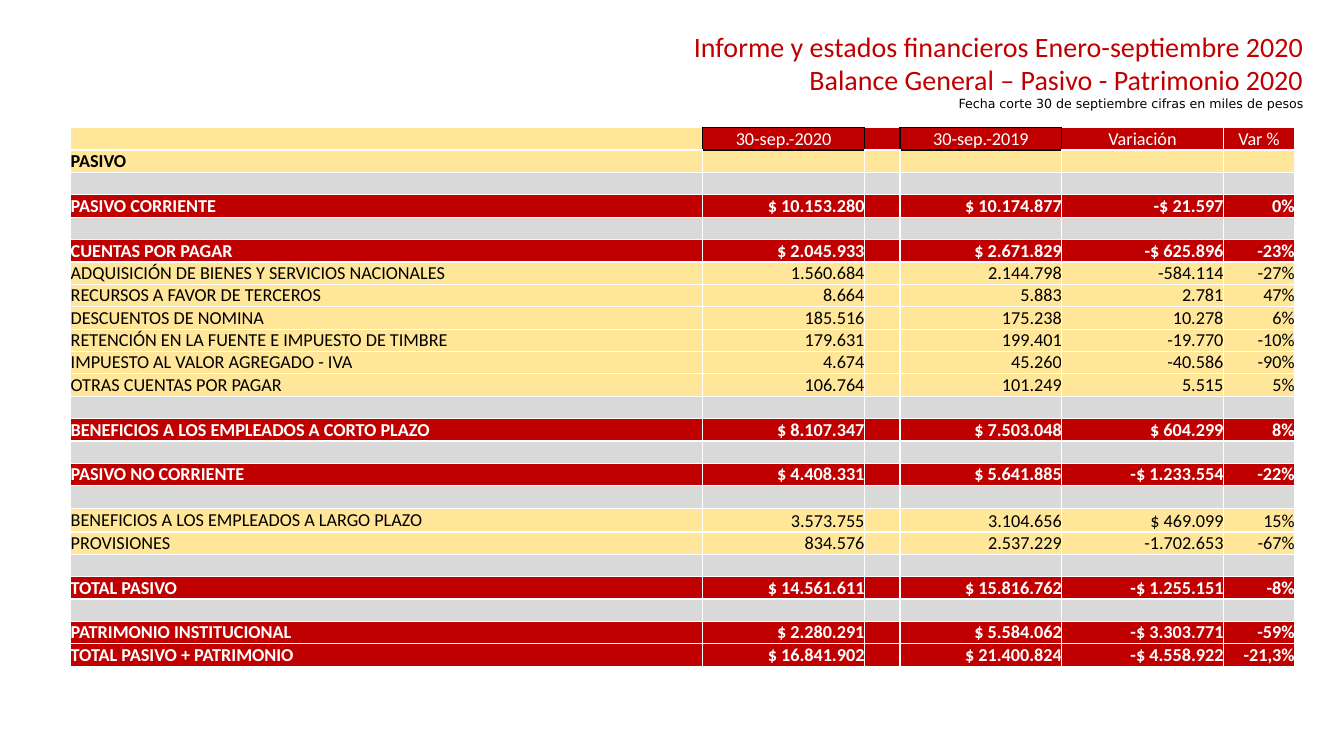
from lxml import etree
from pptx import Presentation
from pptx import util as u
from pptx.dml.color import RGBColor
from pptx.enum import text
from pptx.oxml import ns

RED = RGBColor(0xC0, 0x00, 0x00)
CREAM = RGBColor(0xFF, 0xE6, 0x99)
GREY = RGBColor(0xD9, 0xD9, 0xD9)
WHITE = RGBColor(0xFF, 0xFF, 0xFF)
BLACK = RGBColor(0x00, 0x00, 0x00)

LEFT, CENTER, RIGHT = text.PP_ALIGN.LEFT, text.PP_ALIGN.CENTER, text.PP_ALIGN.RIGHT
BOTTOM, MIDDLE = text.MSO_ANCHOR.BOTTOM, text.MSO_ANCHOR.MIDDLE

# Row kinds: fill, text colour, bold
ROW_STYLES = {
    "header": (RED, WHITE, False),
    "section": (CREAM, BLACK, True),
    "total": (RED, WHITE, True),
    "item": (CREAM, BLACK, False),
    "gap": (GREY, BLACK, False),
}
GAP = ("gap",)

# Kind, account, 2020, 2019, change, change in percent
BALANCE = [
    ("header", "", "30-sep.-2020", "30-sep.-2019", "Variación", "Var %"),
    ("section", "PASIVO"),
    GAP,
    ("total", "PASIVO CORRIENTE", "$ 10.153.280", "$ 10.174.877", "-$ 21.597", "0%"),
    GAP,
    ("total", "CUENTAS POR PAGAR", "$ 2.045.933", "$ 2.671.829", "-$ 625.896", "-23%"),
    ("item", "ADQUISICIÓN DE BIENES Y SERVICIOS NACIONALES", "1.560.684", "2.144.798", "-584.114", "-27%"),
    ("item", "RECURSOS A FAVOR DE TERCEROS", "8.664", "5.883", "2.781", "47%"),
    ("item", "DESCUENTOS DE NOMINA", "185.516", "175.238", "10.278", "6%"),
    ("item", "RETENCIÓN EN LA FUENTE E IMPUESTO DE TIMBRE", "179.631", "199.401", "-19.770", "-10%"),
    ("item", "IMPUESTO AL VALOR AGREGADO - IVA", "4.674", "45.260", "-40.586", "-90%"),
    ("item", "OTRAS CUENTAS POR PAGAR", "106.764", "101.249", "5.515", "5%"),
    GAP,
    ("total", "BENEFICIOS A LOS EMPLEADOS A CORTO PLAZO", "$ 8.107.347", "$ 7.503.048", "$ 604.299", "8%"),
    GAP,
    ("total", "PASIVO NO CORRIENTE", "$ 4.408.331", "$ 5.641.885", "-$ 1.233.554", "-22%"),
    GAP,
    ("item", "BENEFICIOS A LOS EMPLEADOS A LARGO PLAZO", "3.573.755", "3.104.656", "$ 469.099", "15%"),
    ("item", "PROVISIONES", "834.576", "2.537.229", "-1.702.653", "-67%"),
    GAP,
    ("total", "TOTAL PASIVO", "$ 14.561.611", "$ 15.816.762", "-$ 1.255.151", "-8%"),
    GAP,
    ("total", "PATRIMONIO INSTITUCIONAL", "$ 2.280.291", "$ 5.584.062", "-$ 3.303.771", "-59%"),
    ("total", "TOTAL PASIVO + PATRIMONIO", "$ 16.841.902", "$ 21.400.824", "-$ 4.558.922", "-21,3%"),
]
COLUMN_WIDTHS = [451.4, 115.5, 25.5, 115.5, 115.5, 50.9]
SPACER_COLUMN = 2
DATE_CELLS = {(0, 1), (0, 3)}  # header cells with a black outline
LARGE_ROW = 17
SIDES = {"L": (0, -1), "R": (0, 1), "T": (-1, 0), "B": (1, 0)}


class BalanceSlide:
    font_name = "Calibri"
    table_size = 13
    row_height = 16

    def __init__(self, slide):
        self.slide = slide

    def add_words(self, paragraph, words, align, color, **formats):
        paragraph.alignment = align
        run = paragraph.add_run()
        run.text = words
        for name, value in {"name": self.font_name, **formats}.items():
            setattr(run.font, name, value)
        run.font.color.rgb = color

    def heading(self, left, top, width, height, lines):
        box = self.slide.shapes.add_textbox(u.Pt(left), u.Pt(top), u.Pt(width), u.Pt(height))
        frame = box.text_frame
        frame.word_wrap = True
        frame.auto_size = text.MSO_AUTO_SIZE.SHAPE_TO_FIT_TEXT
        for index, (words, color, formats) in enumerate(lines):
            paragraph = frame.add_paragraph() if index else frame.paragraphs[0]
            self.add_words(paragraph, words, RIGHT, color, **formats)

    def borders(self, cell, row, column):
        properties = cell._tc.get_or_add_tcPr()
        for side, (down, across) in SIDES.items():
            outlined = DATE_CELLS & {(row, column), (row + down, column + across)}
            line = etree.SubElement(properties, ns.qn(f"a:ln{side}"), w=str(u.Pt(1)))
            fill = etree.SubElement(line, ns.qn("a:solidFill"))
            etree.SubElement(fill, ns.qn("a:srgbClr"), val=str(BLACK if outlined else WHITE))

    def cell(self, cell, words, fill, align, anchor, color, bold):
        formats = {"margin_left": 0, "margin_right": 0, "margin_top": 0,
                   "margin_bottom": 0, "vertical_anchor": anchor}
        for name, value in formats.items():
            setattr(cell, name, value)
        cell.fill.solid()
        cell.fill.fore_color.rgb = fill
        paragraph = cell.text_frame.paragraphs[0]
        if words:
            self.add_words(paragraph, words, align, color, size=u.Pt(self.table_size), bold=bold)
        else:  # keeps empty rows as low as the others
            etree.SubElement(paragraph._p, ns.qn("a:endParaRPr"), sz=str(self.table_size * 100))

    def table(self, left, top, widths, rows):
        table = self.slide.shapes.add_table(
            len(rows), len(widths), u.Pt(left), u.Pt(top),
            u.Pt(sum(widths)), u.Pt(self.row_height * len(rows))).table
        for column, width in zip(table.columns, widths):
            column.width = u.Pt(width)
        for r, (kind, *entries) in enumerate(rows):
            table.rows[r].height = u.Pt(self.row_height + (r == LARGE_ROW))
            fill, color, bold = ROW_STYLES[kind]
            entries += [""] * (len(widths) - 1 - len(entries))
            entries.insert(SPACER_COLUMN, "")
            for c, words in enumerate(entries):
                cell = table.cell(r, c)
                align = CENTER if kind == "header" else RIGHT if c else LEFT
                anchor = MIDDLE if (r, c) == (LARGE_ROW, 0) else BOTTOM
                shade = CREAM if (r, c) == (0, 0) else fill
                self.borders(cell, r, c)
                self.cell(cell, words, shade, align, anchor, color, bold)


def main():
    deck = Presentation()
    deck.slide_width, deck.slide_height = u.Pt(960), u.Pt(540)
    balance = BalanceSlide(deck.slides.add_slide(deck.slide_layouts[6]))

    # Title and cut-off date
    title = {"size": u.Pt(20)}
    balance.heading(365, 17.3, 573, 67, [
        ("Informe y estados financieros Enero-septiembre 2020", RED, title),
        ("Balance General – Pasivo - Patrimonio 2020", RED, title),
        ("Fecha corte 30 de septiembre cifras en miles de pesos", BLACK,
         {"size": u.Pt(9), "name": "DejaVu Sans"}),
    ])

    # Balance sheet
    balance.table(50.5, 91.2, COLUMN_WIDTHS, BALANCE)

    deck.save("out.pptx")


if __name__ == "__main__":
    main()
